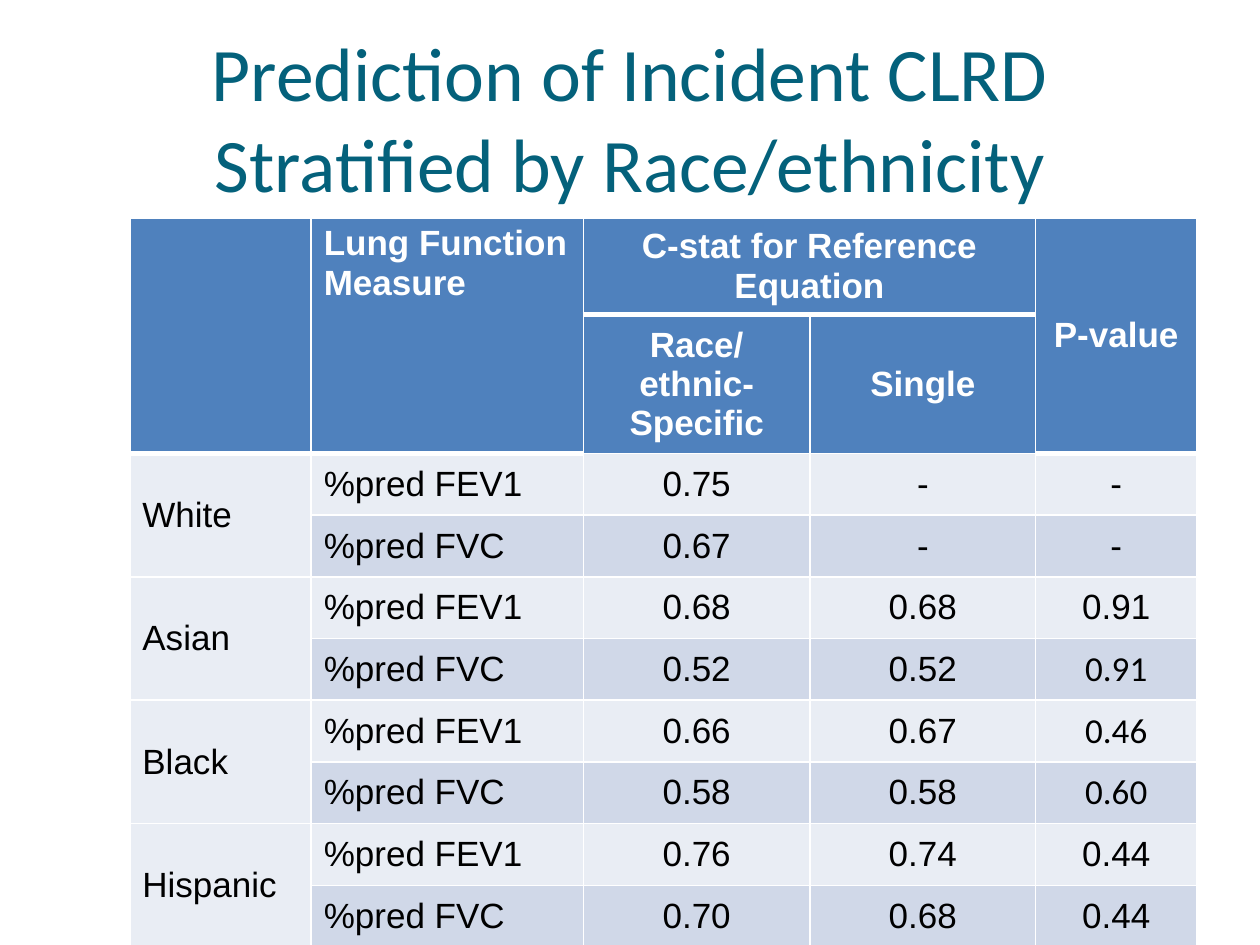
from lxml import etree
from pptx import Presentation
from pptx.dml.color import RGBColor
from pptx.enum.text import MSO_ANCHOR as Anchor, PP_ALIGN as Align
from pptx.oxml.ns import qn
from pptx.util import Inches, Pt

TEAL = RGBColor(0x04, 0x61, 0x7B)
BLUE = RGBColor(0x4F, 0x81, 0xBD)
PALE = RGBColor(0xE9, 0xED, 0xF4)
BAND = RGBColor(0xD0, 0xD8, 0xE8)
WHITE = RGBColor(0xFF, 0xFF, 0xFF)
BLACK = RGBColor(0, 0, 0)

COL_WIDTHS = [1.44, 2.16, 1.8, 1.79, 1.28]
ROW_HEIGHTS = [0.49, 1.1] + [0.49] * 8
HEADER = [
    ["", "Lung Function Measure", "C-stat for Reference Equation", "", "P-value"],
    ["", "", "Race/ethnic-Specific", "Single", ""],
]
RESULTS = [
    ["White", "%pred FEV1", "0.75", "-", "-"],
    ["", "%pred FVC", "0.67", "-", "-"],
    ["Asian", "%pred FEV1", "0.68", "0.68", "0.91"],
    ["", "%pred FVC", "0.52", "0.52", "0.91"],
    ["Black", "%pred FEV1", "0.66", "0.67", "0.46"],
    ["", "%pred FVC", "0.58", "0.58", "0.60"],
    ["Hispanic", "%pred FEV1", "0.76", "0.74", "0.44"],
    ["", "%pred FVC", "0.70", "0.68", "0.44"],
]
CALIBRI_CELLS = {(5, 4), (6, 4), (7, 4)}


def set_font(p, name, size, color, bold=False):
    p.font.name = name
    p.font.size = Pt(size)
    p.font.color.rgb = color
    p.font.bold = bold


def add_title(slide, text):
    box = slide.shapes.add_textbox(Inches(0.5), Inches(0.3), Inches(9), Inches(1.25))
    tf = box.text_frame
    tf.word_wrap = True
    tf.vertical_anchor = Anchor.MIDDLE
    p = tf.paragraphs[0]
    p.text = text
    p.alignment = Align.CENTER
    set_font(p, "Calibri", 43.2, TEAL)


def set_borders(cell, widths):
    tc_pr = cell._tc.get_or_add_tcPr()
    for side, width in widths.items():
        ln = etree.SubElement(tc_pr, qn(f"a:ln{side}"), w=str(Pt(width)))
        fill = etree.SubElement(ln, qn("a:solidFill"))
        etree.SubElement(fill, qn("a:srgbClr"), val=str(WHITE))


def fill_cell(cell, text, row, col):
    header = row < len(HEADER)
    if row == 0:
        set_borders(cell, {"L": 1, "R": 1, "T": 1, "B": 3})
    cell.fill.solid()
    if header:
        cell.fill.fore_color.rgb = BLUE
    else:
        cell.fill.fore_color.rgb = BAND if row % 2 else PALE
    cell.vertical_anchor = Anchor.TOP if header and col < 2 else Anchor.MIDDLE
    p = cell.text_frame.paragraphs[0]
    p.text = text
    p.alignment = Align.LEFT if col < 2 else Align.CENTER
    name = "Calibri" if (row, col) in CALIBRI_CELLS else "Arial"
    set_font(p, name, 20, WHITE if header else BLACK, header)


def add_results_table(slide):
    frame = slide.shapes.add_table(
        len(ROW_HEIGHTS), len(COL_WIDTHS), Inches(1.03), Inches(1.73),
        Inches(sum(COL_WIDTHS)), Inches(sum(ROW_HEIGHTS)))
    table = frame.table
    for column, width in zip(table.columns, COL_WIDTHS):
        column.width = Inches(width)
    for row, height in zip(table.rows, ROW_HEIGHTS):
        row.height = Inches(height)
    for r, texts in enumerate(HEADER + RESULTS):
        for c, text in enumerate(texts):
            fill_cell(table.cell(r, c), text, r, c)
    for c in (0, 1, 4):
        table.cell(0, c).merge(table.cell(1, c))
    table.cell(0, 2).merge(table.cell(0, 3))
    for r in range(len(HEADER), len(ROW_HEIGHTS), 2):
        table.cell(r, 0).merge(table.cell(r + 1, 0))


def main():
    prs = Presentation()
    prs.slide_width = Inches(10)
    prs.slide_height = Inches(7.5)
    slide = prs.slides.add_slide(prs.slide_layouts[6])
    add_title(slide, "Prediction of Incident CLRD\vStratified by Race/ethnicity")
    add_results_table(slide)
    prs.save("out.pptx")


if __name__ == "__main__":
    main()
